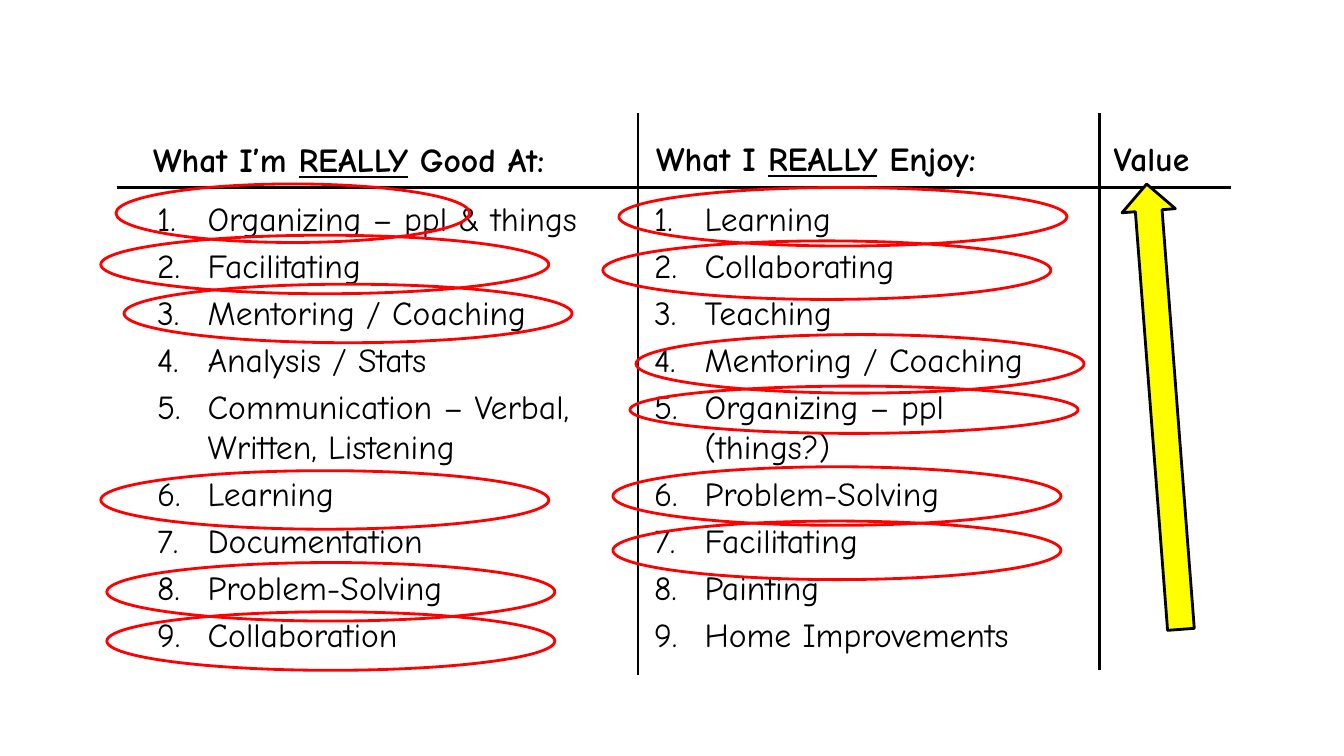
import pptx
import pptx.util
import pptx.dml.color
import pptx.enum.shapes
import pptx.enum.text
import pptx.oxml.ns
from lxml import etree

Pt = pptx.util.Pt
SHAPE = pptx.enum.shapes.MSO_SHAPE
FONT = "Comic Neue"
COLORS = {"ink": "000000", "ring": "FF0000", "arrow": "FFFF00"}

GOOD = ["Organizing – ppl & things", "Facilitating", "Mentoring / Coaching",
        "Analysis / Stats", "Communication – Verbal, Written, Listening",
        "Learning", "Documentation", "Problem-Solving", "Collaboration"]
ENJOY = ["Learning", "Collaborating", "Teaching", "Mentoring / Coaching",
         "Organizing – ppl \n(things?)", "Problem-Solving", "Facilitating",
         "Painting", "Home Improvements"]

# Rings: left, top, width, height
WIDE, TALL = 320, 41.8
RINGS = [
    (82.8, 131.4, 252.7, TALL), (72, 168, WIDE, TALL), (88.6, 203, WIDE, TALL),
    (72, 336.2, WIDE, TALL), (76.3, 401.8, WIDE, TALL), (76.3, 437, WIDE, TALL),
    (442.1, 133.9, WIDE, TALL), (430.6, 172.1, WIDE, TALL),
    (454.3, 239, WIDE, TALL), (450, 275.8, WIDE, 33.8),
    (437.8, 333.4, WIDE, TALL), (437.8, 372.2, WIDE, TALL),
]

# Rules: start x, start y, end x, end y
RULES = [(455.8, 80.6, 455.8, 482.4), (83.5, 134, 879.1, 134),
         (785.5, 80.6, 785.5, 478.8)]


def color(name):
    return pptx.dml.color.RGBColor.from_string(COLORS[name])


def style(run, bold=False):
    run.font.name = FONT
    run.font.size = Pt(24)
    run.font.bold = bold
    run.font.color.rgb = color("ink")


def place(shape, box):
    shape.left, shape.top, shape.width, shape.height = map(Pt, box)
    shape.text_frame.auto_size = pptx.enum.text.MSO_AUTO_SIZE.NONE


def add_head(shape, box, parts):
    place(shape, box)
    shape.text_frame.vertical_anchor = pptx.enum.text.MSO_ANCHOR.BOTTOM
    para = shape.text_frame.paragraphs[0]
    for part in parts:
        run = para.add_run()
        run.text = part
        style(run, bold=True)
        run.font.underline = part == "REALLY"


def add_list(shape, box, items):
    place(shape, box)
    frame = shape.text_frame
    for i, item in enumerate(items):
        para = frame.add_paragraph() if i else frame.paragraphs[0]
        para.text = item
        for run in para.runs:
            style(run)
        # Numbering with a hanging indent
        props = para._p.get_or_add_pPr()
        props.set("marL", str(Pt(36)))
        props.set("indent", str(-Pt(36)))
        etree.SubElement(props, pptx.oxml.ns.qn("a:buAutoNum"),
                         type="arabicPeriod")


def add_rule(slide, ends):
    rule = slide.shapes.add_connector(
        pptx.enum.shapes.MSO_CONNECTOR.STRAIGHT, *map(Pt, ends))
    rule.line.color.rgb = color("ink")
    rule.line.width = Pt(2)
    etree.SubElement(rule._element.spPr, pptx.oxml.ns.qn("a:effectLst"))


def add_form(slide, kind, box, line, fill=None):
    form = slide.shapes.add_shape(kind, *map(Pt, box))
    form.shadow.inherit = False
    form.line.color.rgb = color(line)
    form.line.width = Pt(2)
    if fill:
        form.fill.solid()
        form.fill.fore_color.rgb = color(fill)
    else:
        form.fill.background()
    return form


def add_label(slide, box, text):
    label = slide.shapes.add_textbox(*map(Pt, box))
    label.text_frame.word_wrap = False
    label.text_frame.text = text
    style(label.text_frame.paragraphs[0].runs[0], bold=True)


def main():
    deck = pptx.Presentation()
    deck.slide_width, deck.slide_height = Pt(960), Pt(540)
    slide = deck.slides.add_slide(deck.slide_layouts.get_by_name("Comparison"))
    title, *bodies = slide.placeholders
    title._element.getparent().remove(title._element)

    # Two columns of headings and numbered lists
    add_head(bodies[0], (102.2, 81.4, 370, 50.4),
             ["What I’m ", "REALLY", " Good At:"])
    add_list(bodies[1], (105.1, 137.5, 344.9, 344.9), GOOD)
    add_head(bodies[2], (461.5, 80.6, 311.8, 50.4),
             ["What I ", "REALLY", " Enjoy:"])
    add_list(bodies[3], (460.1, 137.5, 401.8, 344.9), ENJOY)

    # Grid rules and rings
    for ends in RULES:
        add_rule(slide, ends)
    for box in RINGS:
        add_form(slide, SHAPE.OVAL, box, "ring")

    # Value column
    add_label(slide, (788.4, 95, 77, 36), "Value")
    arrow = add_form(slide, SHAPE.UP_ARROW, (812.2, 131, 38.2, 319),
                     "ink", "arrow")
    arrow.rotation = 355.6

    deck.save("out.pptx")


if __name__ == "__main__":
    main()
